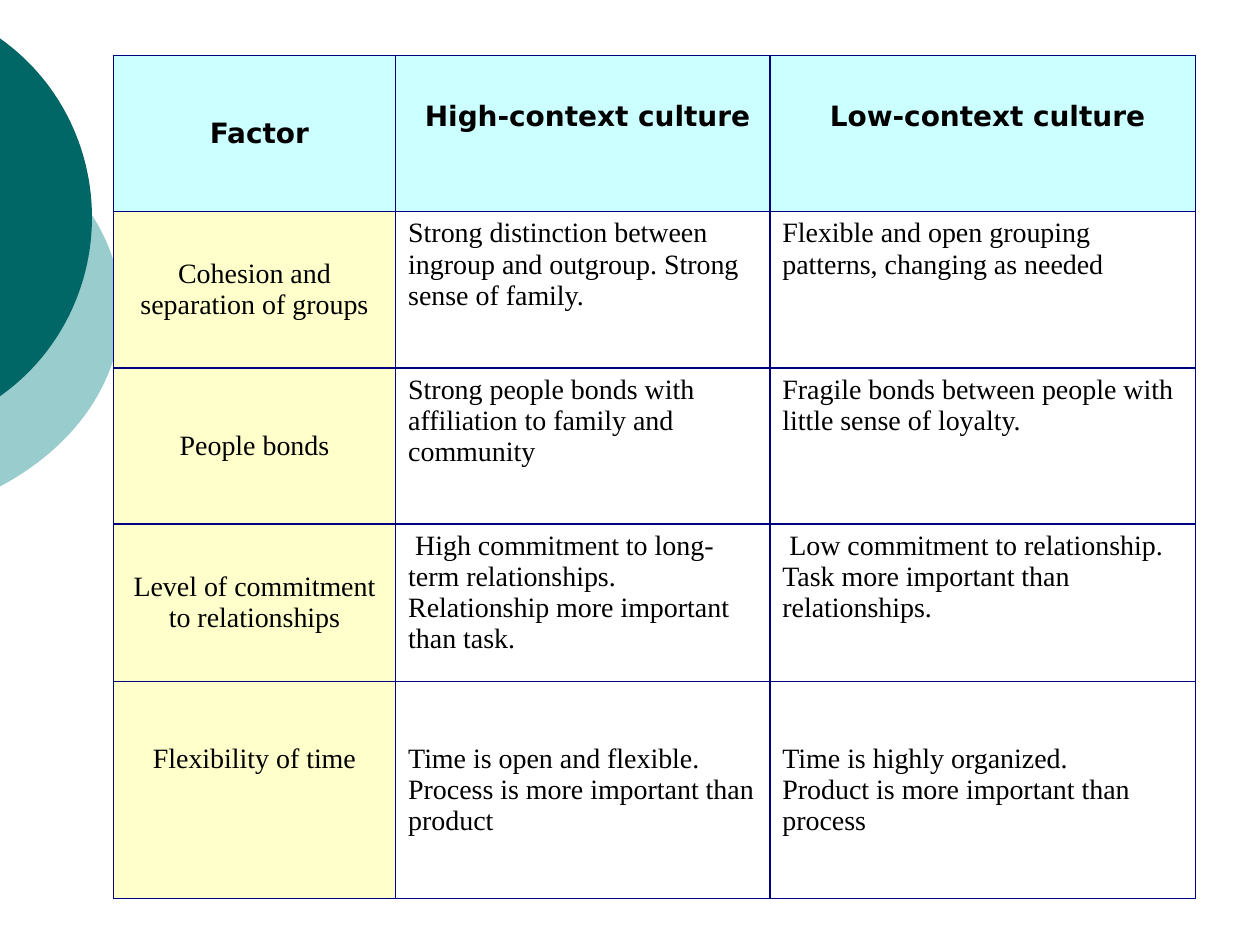
import pptx
import pptx.dml.color
import pptx.enum.shapes
import pptx.enum.text
import pptx.oxml
import pptx.oxml.ns
import pptx.util
from pptx.util import Inches

ALIGN = pptx.enum.text.PP_ALIGN
ANCHOR = pptx.enum.text.MSO_ANCHOR

HEADINGS = (" Factor", " High-context culture", " Low-context culture")
FACTORS = [
    ("Cohesion and separation of groups",
     "Strong distinction between ingroup and outgroup. Strong sense of family.",
     "Flexible and open grouping patterns, changing as needed"),
    (" People bonds ",
     "Strong people bonds with affiliation to family and community",
     "Fragile bonds between people with little sense of loyalty."),
    ("Level of commitment to relationships",
     " High commitment to long-term relationships.\n"
     "Relationship more important than task.",
     " Low commitment to relationship. Task more important than relationships."),
    ("Flexibility of time",
     "Time is open and flexible.\nProcess is more important than product",
     "Time is highly organized.\nProduct is more important than process"),
]
COLUMN_WIDTHS = (2.24, 2.97, 3.38)
ROW_HEIGHTS = (1.24, 1.24, 1.24, 1.25, 1.72)
TABLE_LEFT, TABLE_TOP = 0.9, 0.44
# Text raised above the middle of its cell: (row, column) -> bottom margin
RAISED = {(0, 1): 0.31, (0, 2): 0.31, (4, 0): 0.54}

ELLIPSES = [  # left, top, width, height, colour
    (-3.54, 0.75, 4.5, 3.42, "99CCCC"),
    (-2.65, 0, 3.38, 3.45, "006666"),
]
HEADING_FILL, FACTOR_FILL, BORDER = "CCFFFF", "FFFFCC", "000080"


def rgb(value):
    return pptx.dml.color.RGBColor.from_string(value)


def paint(target, colour):
    target.fill.solid()
    target.fill.fore_color.rgb = rgb(colour)


def write(frame, text, *, font="Times New Roman", size=16, bold=False,
          colour="000000", align=ALIGN.LEFT):
    paragraph = frame.paragraphs[0]
    paragraph.text = text
    paragraph.alignment = align
    for run in paragraph.runs:
        run.font.name = font
        run.font.size = pptx.util.Pt(size)
        run.font.bold = bold
        run.font.color.rgb = rgb(colour)


def add_borders(cell, colour, points=1):
    properties = cell._tc.get_or_add_tcPr()
    for position, side in enumerate(("lnL", "lnR", "lnT", "lnB")):
        properties.insert(position, pptx.oxml.parse_xml(
            f'<a:{side} {pptx.oxml.ns.nsdecls("a")} w="{pptx.util.Pt(points)}">'
            f'<a:solidFill><a:srgbClr val="{colour}"/></a:solidFill></a:{side}>'))


def add_ellipse(slide, left, top, width, height, colour):
    ellipse = slide.shapes.add_shape(
        pptx.enum.shapes.MSO_SHAPE.OVAL,
        Inches(left), Inches(top), Inches(width), Inches(height))
    ellipse.shadow.inherit = False
    ellipse.line.fill.background()
    paint(ellipse, colour)


def format_cell(cell, text, row, column):
    heading, factor = row == 0, column == 0
    if heading or factor:
        paint(cell, HEADING_FILL if heading else FACTOR_FILL)
    else:
        cell.fill.background()
    add_borders(cell, BORDER)
    last = row == len(FACTORS)
    cell.vertical_anchor = ANCHOR.MIDDLE if heading or factor or last else ANCHOR.TOP
    cell.margin_bottom = Inches(RAISED.get((row, column), 0.05))
    write(cell.text_frame, text, bold=heading,
          font="DejaVu Sans" if heading else "Times New Roman",
          align=ALIGN.CENTER if heading or factor else ALIGN.LEFT)


def add_culture_table(slide):
    rows = [HEADINGS, *FACTORS]
    table = slide.shapes.add_table(
        len(rows), len(HEADINGS), Inches(TABLE_LEFT), Inches(TABLE_TOP),
        Inches(sum(COLUMN_WIDTHS)), Inches(sum(ROW_HEIGHTS))).table
    table.first_row = table.horz_banding = False
    for column, width in zip(table.columns, COLUMN_WIDTHS):
        column.width = Inches(width)
    for row, height in zip(table.rows, ROW_HEIGHTS):
        row.height = Inches(height)
    for r, texts in enumerate(rows):
        for c, text in enumerate(texts):
            format_cell(table.cell(r, c), text, r, c)


def main():
    deck = pptx.Presentation()
    deck.slide_width, deck.slide_height = Inches(10), Inches(7.5)
    slide = deck.slides.add_slide(deck.slide_layouts[6])
    for ellipse in ELLIPSES:
        add_ellipse(slide, *ellipse)
    add_culture_table(slide)
    deck.save("out.pptx")


if __name__ == "__main__":
    main()
